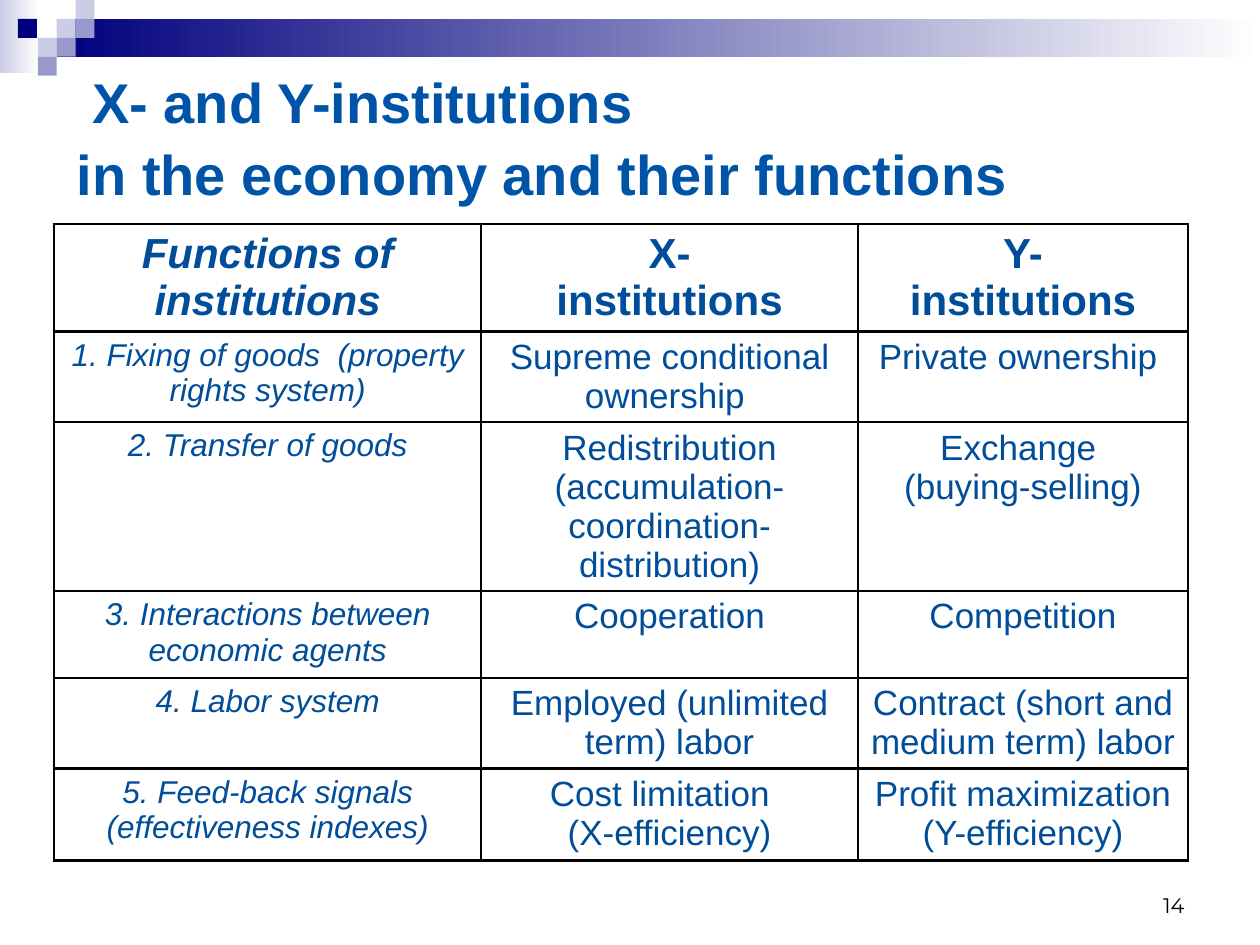
from lxml import etree
from pptx import Presentation
from pptx.dml.color import RGBColor
from pptx.enum.shapes import MSO_SHAPE
from pptx.enum.text import MSO_ANCHOR, MSO_AUTO_SIZE, PP_ALIGN
from pptx.oxml.ns import qn
from pptx.util import Inches, Pt

RECT = MSO_SHAPE.RECTANGLE
LEFT, CENTER, RIGHT = PP_ALIGN.LEFT, PP_ALIGN.CENTER, PP_ALIGN.RIGHT
MIDDLE, BOTTOM = MSO_ANCHOR.MIDDLE, MSO_ANCHOR.BOTTOM
NO_FIT = MSO_AUTO_SIZE.NONE

NAVY = RGBColor(0x00, 0x00, 0x7D)
LILAC = RGBColor(0xCC, 0xCC, 0xE6)
VIOLET = RGBColor(0x99, 0x99, 0xCC)
TITLE_BLUE = RGBColor(0x00, 0x54, 0xA8)
TABLE_BLUE = RGBColor(0x00, 0x4D, 0x9A)
WHITE = RGBColor(0xFF, 0xFF, 0xFF)
BLACK = RGBColor(0x00, 0x00, 0x00)

UNIT = 0.15  # side of one mosaic square
MOSAIC = [(3, 1, LILAC), (4, 0, LILAC), (4, 1, VIOLET), (2, 2, LILAC),
          (0.95, 1, NAVY), (3, 2, VIOLET), (2, 3, VIOLET)]

COLUMNS = [3.39, 2.99, 2.62]
ROW_HEIGHTS = [0.85, 0.72, 1.34, 0.69, 0.72, 0.73]
ROWS = [
    ["Functions of institutions", "X-\ninstitutions", "Y-\ninstitutions"],
    ["1. Fixing of goods  (property rights system)",
     "Supreme conditional ownership ", "Private ownership "],
    ["2. Transfer of goods",
     "Redistribution (accumulation-coordination-distribution)",
     "Exchange \n(buying-selling)"],
    ["3. Interactions between economic agents", "Cooperation", "Competition"],
    ["4. Labor system", "Employed (unlimited term) labor",
     "Contract (short and medium term) labor"],
    ["5. Feed-back signals (effectiveness indexes)",
     "Cost limitation  \n(Х-efficiency)",
     "Profit maximization \n(Y-efficiency)"],
]


def write(tf, text, align, color, **font):
    """Fill a text frame, one paragraph per line of text."""
    tf.text = text
    for p in tf.paragraphs:
        p.alignment = align
        for r in p.runs:
            r.font.color.rgb = color
            for name, value in font.items():
                setattr(r.font, name, value)


def add_band(shapes, box, color, fade=False):
    sp = shapes.add_shape(RECT, *map(Inches, box))
    sp.shadow.inherit = False
    sp.line.fill.background()
    if fade:
        sp.fill.gradient()
        sp.fill.gradient_angle = 0
        for stop, rgb in zip(sp.fill.gradient_stops, (color, WHITE)):
            stop.color.rgb = rgb
    else:
        sp.fill.solid()
        sp.fill.fore_color.rgb = color


def add_header(slide, width):
    shapes = slide.shapes.add_group_shape().shapes
    add_band(shapes, (0, 0, 0.31, 0.58), LILAC, fade=True)
    add_band(shapes, (3 * UNIT, UNIT, width - 3 * UNIT, 2 * UNIT), NAVY, fade=True)
    for col, row, color in MOSAIC:
        add_band(shapes, (col * UNIT, row * UNIT, UNIT, UNIT), color)


def add_title(slide, box):
    sp = slide.shapes.title
    sp.left, sp.top, sp.width, sp.height = map(Inches, box)
    tf = sp.text_frame
    tf.auto_size, tf.vertical_anchor = NO_FIT, MIDDLE
    write(tf, " X- and Y-institutions \vin the economy and their functions",
          LEFT, TITLE_BLUE, size=Pt(32), name="Arial", bold=True)
    tf.paragraphs[0].line_spacing = 1.07


def add_borders(cell):
    """Draw the four cell edges; they must precede the fill in the XML."""
    tc_pr = cell._tc.get_or_add_tcPr()
    for i, edge in enumerate(("a:lnL", "a:lnR", "a:lnT", "a:lnB")):
        ln = etree.Element(qn(edge), w=str(Pt(1.5)))
        fill = etree.SubElement(ln, qn("a:solidFill"))
        etree.SubElement(fill, qn("a:srgbClr"), val=str(BLACK))
        tc_pr.insert(i, ln)


def add_function_table(slide, left, top):
    box = map(Inches, (left, top, sum(COLUMNS), sum(ROW_HEIGHTS)))
    table = slide.shapes.add_table(len(ROWS), len(COLUMNS), *box).table
    table.first_row = table.horz_banding = False
    for column, width in zip(table.columns, COLUMNS):
        column.width = Inches(width)
    for i, (row, height) in enumerate(zip(table.rows, ROW_HEIGHTS)):
        row.height = Inches(height)
        for j, cell in enumerate(row.cells):
            size = 24 if i == 0 else 18 if j == 0 else 20
            write(cell.text_frame, ROWS[i][j], CENTER, TABLE_BLUE,
                  size=Pt(size), name="Arial", bold=i == 0, italic=j == 0)
            cell.fill.background()
            add_borders(cell)


def add_page_number(slide, box):
    tf = slide.shapes.add_textbox(*map(Inches, box)).text_frame
    tf.word_wrap, tf.vertical_anchor = True, BOTTOM
    write(tf, "14", RIGHT, BLACK, size=Pt(12), name="Montserrat")


def main():
    prs = Presentation()
    prs.slide_width, prs.slide_height = Inches(10), Inches(7.5)
    slide = prs.slides.add_slide(prs.slide_layouts.get_by_name("Title Only"))
    add_header(slide, 10)
    add_title(slide, (0.51, 0.52, 9, 1.1))
    add_function_table(slide, 0.43, 1.78)
    add_page_number(slide, (7.17, 6.83, 2.33, 0.5))
    prs.save("out.pptx")


if __name__ == "__main__":
    main()
